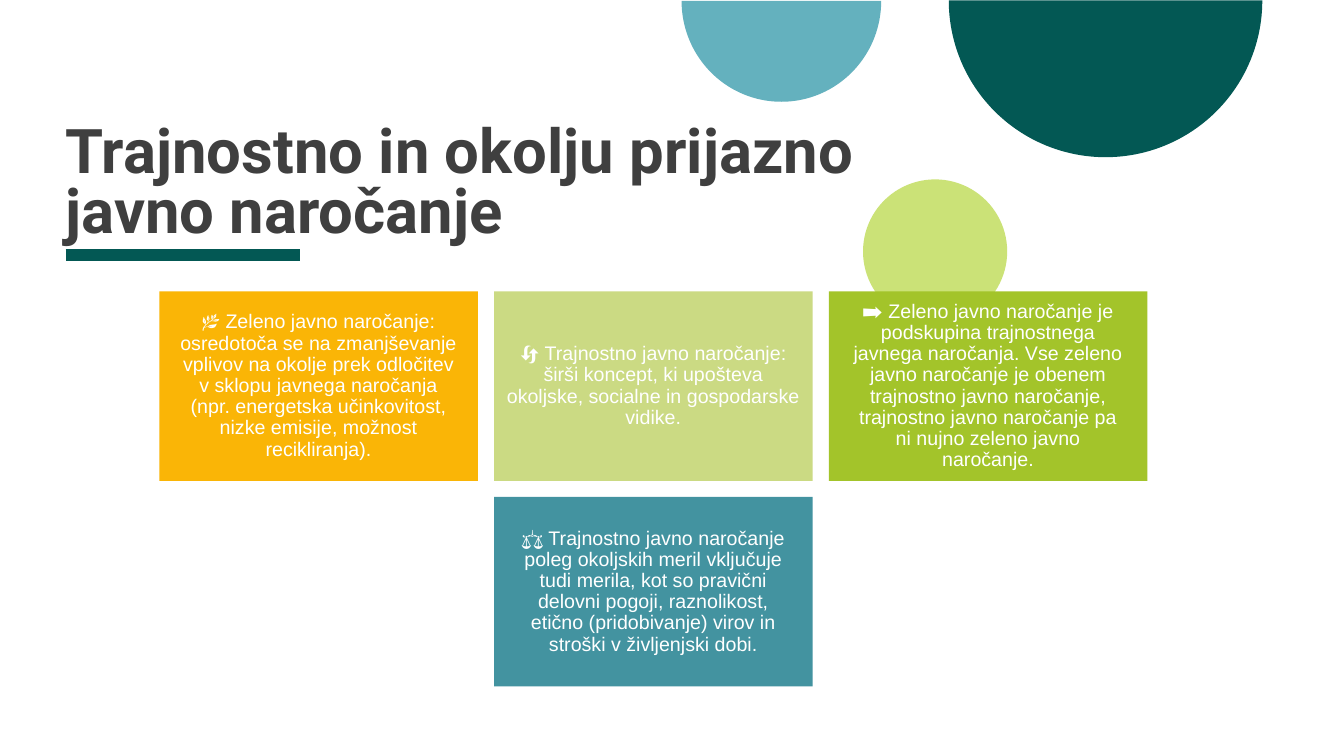
from lxml.etree import SubElement
from pptx import Presentation
from pptx.dml.color import RGBColor
from pptx.enum.shapes import MSO_CONNECTOR, MSO_SHAPE
from pptx.enum.text import MSO_ANCHOR, PP_ALIGN
from pptx.oxml.ns import qn
from pptx.util import Inches, Pt

COLORS = {
    "dark": "035854", "blue": "64B1BE", "lime": "CBE277", "orange": "FAB506",
    "pale": "CBDA83", "green": "A3C42A", "teal": "4393A0",
    "title": "3F3F3F", "white": "FFFFFF",
}

CARDS = [
    ("orange", 0.2, "🌿 Zeleno javno naročanje: osredotoča se na zmanjševanje vplivov na okolje "
     "prek odločitev v sklopu javnega naročanja (npr. energetska učinkovitost, nizke emisije, "
     "možnost recikliranja)."),
    ("pale", 0.1, "🔄 Trajnostno javno naročanje: širši koncept, ki upošteva okoljske, socialne "
     "in gospodarske vidike."),
    ("green", 0.2, "➡️ Zeleno javno naročanje je podskupina trajnostnega javnega naročanja. Vse "
     "zeleno javno naročanje je obenem trajnostno javno naročanje, trajnostno javno naročanje pa "
     "ni nujno zeleno javno naročanje."),
    ("teal", 0.2, "⚖️ Trajnostno javno naročanje poleg okoljskih meril vključuje tudi merila, kot "
     "so pravični delovni pogoji, raznolikost, etično (pridobivanje) virov in stroški v "
     "življenjski dobi."),
]


def rgb(name):
    """Return the named palette colour."""
    return RGBColor.from_string(COLORS[name])


def add_filled(s, kind, box, color):
    """Add a flat shape without outline in the given box."""
    sp = s.shapes.add_shape(kind, *(Inches(v) for v in box))
    sp.shadow.inherit = False
    sp.fill.solid()
    sp.fill.fore_color.rgb = rgb(color)
    sp.line.fill.background()
    return sp


def set_text(tf, text, font, size, color, spacing, anchor, margins):
    """Write one paragraph into a text frame and return it."""
    tf.word_wrap = True
    tf.vertical_anchor = anchor
    side, edge = (Inches(m) for m in margins)
    tf.margin_left = tf.margin_right = side
    tf.margin_top = tf.margin_bottom = edge
    p = tf.paragraphs[0]
    p.line_spacing = spacing
    r = p.add_run()
    r.text = text
    r.font.name = font
    r.font.size = Pt(size)
    r.font.color.rgb = rgb(color)
    return p


def add_circles(s, left, top):
    """Place two half discs hanging from the top edge and a full disc below."""
    for dx, dy, w, h, color in [(2.65, -1.55, 3.11, 3.11, "dark"), (0, -0.99, 1.98, 2, "blue")]:
        sp = add_filled(s, MSO_SHAPE.PIE, (left + dx, top + dy, w, h), color)
        sp.adjustments[0] = 0
        sp.adjustments[1] = 108
    add_filled(s, MSO_SHAPE.OVAL, (left + 1.8, top + 1.78, 1.43, 1.43), "lime")


def add_title(s, left, top, width, height):
    """Place the heading with its thick rule underneath."""
    y = Inches(top + height + 0.1)
    rule = s.shapes.add_connector(MSO_CONNECTOR.STRAIGHT, Inches(left), y, Inches(left + 2.33), y)
    rule.line.color.rgb = rgb("dark")
    rule.line.width = Pt(8)
    SubElement(rule._element.spPr, qn("a:effectLst"))
    box = s.shapes.add_textbox(Inches(left), Inches(top), Inches(width), Inches(height))
    p = set_text(box.text_frame, "Trajnostno in okolju prijazno javno naročanje",
                 "Roboto", 44, "title", 0.8, MSO_ANCHOR.BOTTOM, (0, 0))
    p.runs[0].font.bold = True


def add_cards(s, left, top, width, height, gap=0.16, cols=3):
    """Lay cards of the given size out in rows, centring a short last row."""
    for i, (color, side, text) in enumerate(CARDS):
        row, col = divmod(i, cols)
        in_row = min(cols, len(CARDS) - row * cols)
        x = left + (col + (cols - in_row) / 2) * (width + gap)
        y = top + row * (height + gap)
        sp = add_filled(s, MSO_SHAPE.RECTANGLE, (x, y, width, height), color)
        p = set_text(sp.text_frame, text, "Arial", 14, "white", 0.9,
                     MSO_ANCHOR.MIDDLE, (side, 0.08))
        p.alignment = PP_ALIGN.CENTER


def main():
    """Build the slide and save it."""
    prs = Presentation()
    prs.slide_width, prs.slide_height = Inches(13.33), Inches(7.5)
    s = prs.slides.add_slide(prs.slide_layouts[6])
    add_circles(s, 6.76, 0)
    add_title(s, 0.65, 0.65, 8.51, 1.78)
    add_cards(s, 1.58, 2.89, 3.16, 1.88)
    prs.save("out.pptx")


if __name__ == "__main__":
    main()
